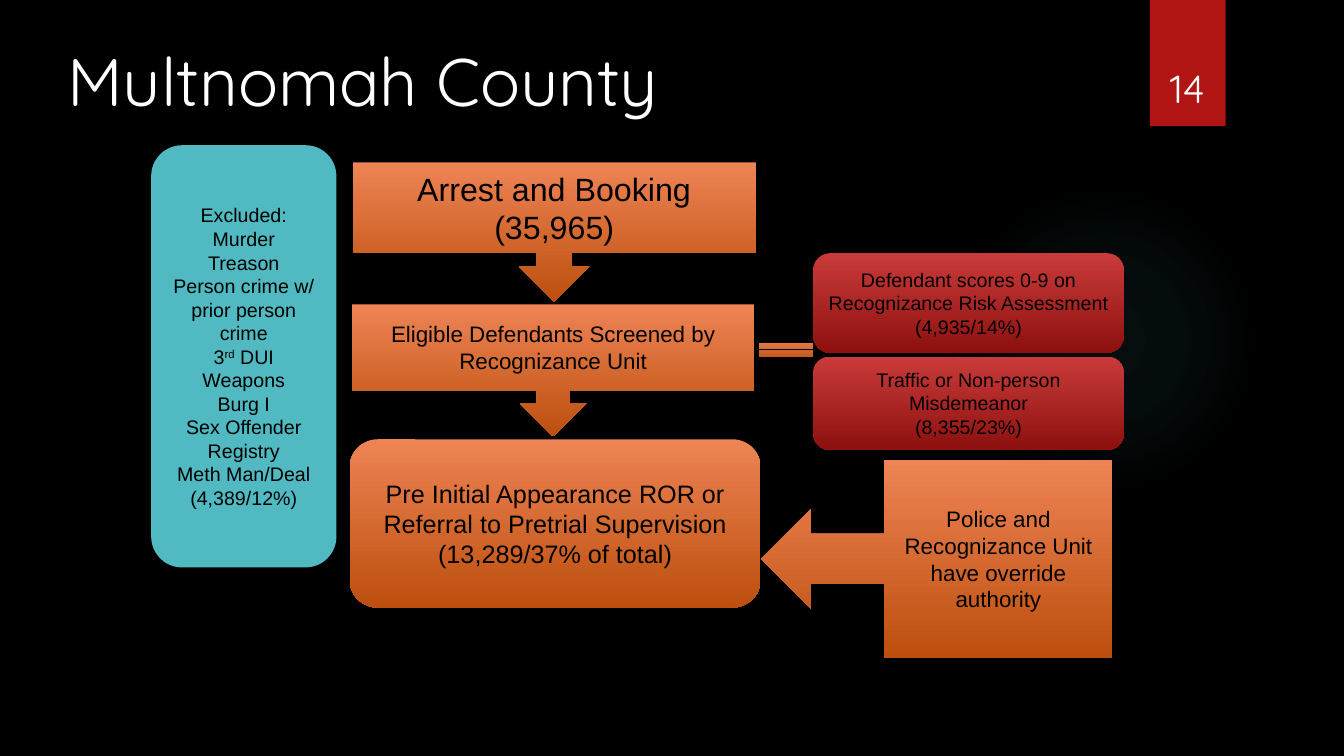
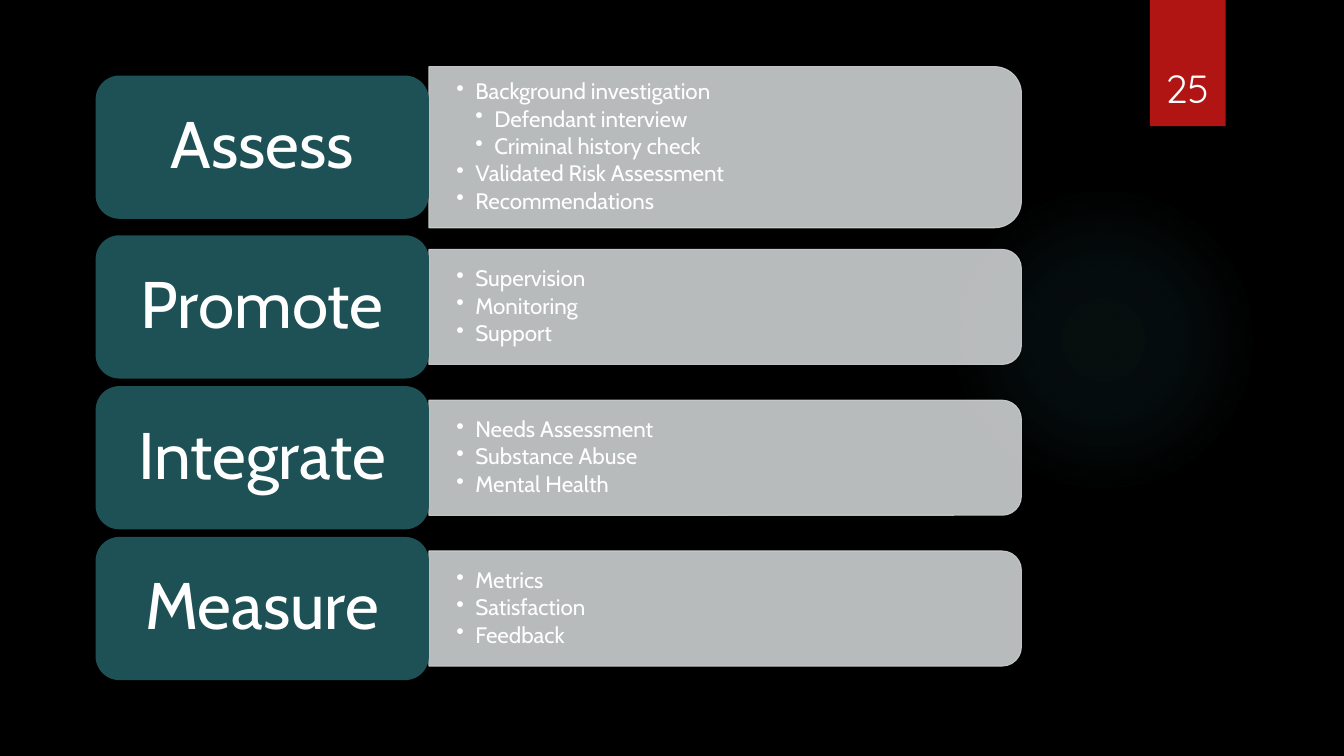
from dataclasses import dataclass

from lxml import etree
from pptx import Presentation
from pptx.dml.color import RGBColor
from pptx.enum.shapes import MSO_SHAPE
from pptx.enum.text import MSO_ANCHOR, PP_ALIGN
from pptx.oxml import parse_xml
from pptx.oxml.ns import nsdecls, qn
from pptx.shapes.autoshape import Shape
from pptx.slide import Slide
from pptx.text.text import TextFrame
from pptx.util import Cm, Pt

RECT = MSO_SHAPE.RECTANGLE
ROUNDED = MSO_SHAPE.ROUNDED_RECTANGLE
OVAL = MSO_SHAPE.OVAL
TAB = MSO_SHAPE.ROUND_2_SAME_RECTANGLE
DOWN_CALLOUT = MSO_SHAPE.DOWN_ARROW_CALLOUT
LEFT_CALLOUT = MSO_SHAPE.LEFT_ARROW_CALLOUT
EQUAL = MSO_SHAPE.MATH_EQUAL
LEFT, CENTER = PP_ALIGN.LEFT, PP_ALIGN.CENTER
TOP, MIDDLE, BOTTOM = MSO_ANCHOR.TOP, MSO_ANCHOR.MIDDLE, MSO_ANCHOR.BOTTOM

COLORS = {
    "black": "000000",
    "white": "FFFFFF",
    "banner": "B01513",
    "aqua": "50B9C1",
    "teal": "1E5155",
    "panel": "CDD0D1",
    "orange_top": "EE8455",
    "orange_bottom": "BC4F0E",
    "red_top": "C93B3A",
    "red_bottom": "8D110F",
}
AQUA = ("aqua",)
ORANGE = ("orange_top", "orange_bottom")
RED = ("red_top", "red_bottom")

HEADING_FONT, FLOW_FONT, LIST_FONT = "Quicksand", "Arial", "Cabin"


@dataclass(frozen=True)
class Box:
    """A rectangle in centimetres."""
    left: float
    top: float
    width: float
    height: float

    def emu(self) -> tuple:
        return Cm(self.left), Cm(self.top), Cm(self.width), Cm(self.height)


@dataclass(frozen=True)
class FlowStep:
    kind: MSO_SHAPE
    box: Box
    fill: tuple
    size: int = 14
    lines: tuple = ()


@dataclass(frozen=True)
class Stage:
    """One row of the list; each item is (indent level, text)."""
    name: str
    panel_height: float
    items: tuple


FLOW = (
    FlowStep(ROUNDED, Box(3.81, 3.66, 4.67, 10.64), AQUA, 14, (
        "Excluded:", "Murder", "Treason", "Person crime w/ prior person crime",
        "3^rd^ DUI", "Weapons", "Burg I", "Sex Offender Registry",
        "Meth Man/Deal", "(4,389/12%)")),
    FlowStep(ROUNDED, Box(20.5, 6.38, 7.82, 2.51), RED, 14, (
        "Defendant scores 0-9 on Recognizance Risk Assessment", "(4,935/14%)")),
    FlowStep(ROUNDED, Box(20.5, 8.99, 7.82, 2.34), RED, 14, (
        "Traffic or Non-person Misdemeanor", "(8,355/23%)")),
    FlowStep(ROUNDED, Box(8.81, 11.07, 10.36, 4.24), ORANGE, 18, (
        "Pre Initial Appearance ROR or Referral to Pretrial Supervision",
        "(13,289/37% of total)")),
    FlowStep(DOWN_CALLOUT, Box(8.89, 4.09, 10.16, 3.51), ORANGE, 23, (
        "Arrest and Booking", "(35,965)")),
    FlowStep(DOWN_CALLOUT, Box(8.86, 7.67, 10.16, 3.33), ORANGE, 16, (
        "Eligible Defendants Screened by Recognizance Unit",)),
    FlowStep(EQUAL, Box(18.87, 8.53, 1.88, 0.56), ORANGE),
    FlowStep(LEFT_CALLOUT, Box(19.18, 11.58, 8.86, 5), ORANGE, 16, (
        "Police and Recognizance Unit have override authority",)),
)

STAGES = (
    Stage("Assess", 4.06, (
        (0, "Background investigation"), (1, "Defendant interview"),
        (1, "Criminal history check"), (0, "Validated Risk Assessment"),
        (0, "Recommendations"))),
    Stage("Promote", 2.9, ((0, "Supervision"), (0, "Monitoring"), (0, "Support"))),
    Stage("Integrate", 2.9, (
        (0, "Needs Assessment"), (0, "Substance Abuse"), (0, "Mental Health"))),
    Stage("Measure", 2.9, ((0, "Metrics"), (0, "Satisfaction"), (0, "Feedback"))),
)
LABEL_LEFT, LABEL_WIDTH, LABEL_HEIGHT = 2.41, 8.4, 3.61
PANEL_WIDTH = 14.93
STAGES_TOP, STAGE_GAP = 1.68, 0.19
BULLET_INDENT = 0.48


def rgb(name: str) -> RGBColor:
    return RGBColor.from_string(COLORS[name])


def add_shape(s: Slide, kind: MSO_SHAPE, box: Box, fill: tuple = ()) -> Shape:
    """Add an unlined shape; two fill colours run from top to bottom."""
    sp = s.shapes.add_shape(kind, *box.emu())
    sp.shadow.inherit = False
    sp.line.fill.background()
    if len(fill) == 1:
        sp.fill.solid()
        sp.fill.fore_color.rgb = rgb(fill[0])
    elif fill:
        sp.fill.gradient()
        sp.fill.gradient_angle = 270
        for stop, name in zip(sp.fill.gradient_stops, fill):
            stop.color.rgb = rgb(name)
    return sp


def write(tf: TextFrame, lines: tuple, font: str, size: int, color: str = "white",
          align: PP_ALIGN = CENTER, anchor: MSO_ANCHOR = MIDDLE) -> None:
    """Fill a text frame; text between carets is superscript."""
    tf.word_wrap = True
    tf.vertical_anchor = anchor
    for i, line in enumerate(lines):
        p = tf.add_paragraph() if i else tf.paragraphs[0]
        p.alignment = align
        for part, text in enumerate(line.split("^")):
            r = p.add_run()
            r.text = text
            r.font.name = font
            r.font.size = Pt(size)
            r.font.color.rgb = rgb(color)
            if part % 2:
                r.font._element.set("baseline", "30000")


def add_text(s: Slide, box: Box, text: str, size: int,
             align: PP_ALIGN, anchor: MSO_ANCHOR) -> None:
    tf = s.shapes.add_textbox(*box.emu()).text_frame
    write(tf, (text,), HEADING_FONT, size, align=align, anchor=anchor)


def set_insets(tf: TextFrame, side: float, end: float) -> None:
    tf.margin_left = tf.margin_right = Cm(side)
    tf.margin_top = tf.margin_bottom = Cm(end)


def add_glow(s: Slide) -> None:
    sp = add_shape(s, OVAL, Box(23.9, 4.65, 7.82, 7.82))
    stops = "".join(
        f'<a:gs pos="{pos}000"><a:srgbClr val="{COLORS["aqua"]}">'
        f'<a:alpha val="{alpha}000"/></a:srgbClr></a:gs>'
        for pos, alpha in ((0, 7), (36, 6), (69, 0)))
    gradient = parse_xml(
        f'<a:gradFill {nsdecls("a")}><a:gsLst>{stops}</a:gsLst><a:path path="circle">'
        '<a:fillToRect l="50000" t="50000" r="50000" b="50000"/></a:path></a:gradFill>')
    sp._element.spPr.find(qn("a:prstGeom")).addnext(gradient)


def new_slide(prs: Presentation, number: int) -> Slide:
    """Add a black slide with the glow and the numbered banner."""
    s = prs.slides.add_slide(prs.slide_layouts[6])
    s.background.fill.solid()
    s.background.fill.fore_color.rgb = rgb("black")
    add_glow(s)
    add_shape(s, RECT, Box(28.98, 0, 1.91, 3.18), ("banner",))
    add_text(s, Box(28.75, 0.81, 2.34, 2.13), str(number), 28, CENTER, BOTTOM)
    return s


def add_flow_slide(prs: Presentation) -> None:
    s = new_slide(prs, 14)
    for step in FLOW:
        sp = add_shape(s, step.kind, step.box, step.fill)
        write(sp.text_frame, step.lines, FLOW_FONT, step.size, "black")
    add_text(s, Box(1.45, 0.86, 20.37, 2.31), "Multnomah County", 48, LEFT, TOP)


def add_panel(s: Slide, box: Box) -> None:
    """Add a translucent panel whose right-hand corners are rounded."""
    shift = (box.width - box.height) / 2
    upright = Box(box.left + shift, box.top - shift, box.height, box.width)
    sp = add_shape(s, TAB, upright, ("panel",))
    sp.rotation = 90
    sp.line.color.rgb = rgb("panel")
    sp.line.width = Pt(0.75)
    for color in sp._element.spPr.iter(qn("a:srgbClr")):
        etree.SubElement(color, qn("a:alpha")).set("val", "90000")


def add_bullets(s: Slide, box: Box, items: tuple) -> None:
    tf = s.shapes.add_textbox(*box.emu()).text_frame
    set_insets(tf, 0.69, 0.36)
    write(tf, tuple(text for _, text in items), LIST_FONT, 16, align=LEFT)
    for p, (level, _) in zip(tf.paragraphs, items):
        p.level = level
        p.line_spacing = 0.9
        p.space_after = Pt(2.3)
        pPr = p._p.get_or_add_pPr()
        pPr.set("marL", str(Cm(BULLET_INDENT * (level + 1))))
        pPr.set("indent", str(-Cm(BULLET_INDENT)))
        etree.SubElement(pPr, qn("a:buChar")).set("char", "•")


def add_stages_slide(prs: Presentation) -> None:
    s = new_slide(prs, 25)
    top = STAGES_TOP
    for stage in STAGES:
        row_height = max(LABEL_HEIGHT, stage.panel_height)
        middle = top + row_height / 2
        panel = Box(LABEL_LEFT + LABEL_WIDTH, middle - stage.panel_height / 2,
                    PANEL_WIDTH, stage.panel_height)
        add_panel(s, panel)
        add_bullets(s, panel, stage.items)
        label = add_shape(s, ROUNDED, Box(LABEL_LEFT, middle - LABEL_HEIGHT / 2,
                                          LABEL_WIDTH, LABEL_HEIGHT), ("teal",))
        set_insets(label.text_frame, 0.5, 0.25)
        write(label.text_frame, (stage.name,), LIST_FONT, 47)
        label.text_frame.paragraphs[0].line_spacing = 0.9
        top += row_height + STAGE_GAP


def main() -> None:
    prs = Presentation()
    prs.slide_width, prs.slide_height = Cm(33.87), Cm(19.05)
    add_flow_slide(prs)
    add_stages_slide(prs)
    prs.save("out.pptx")


if __name__ == "__main__":
    main()
